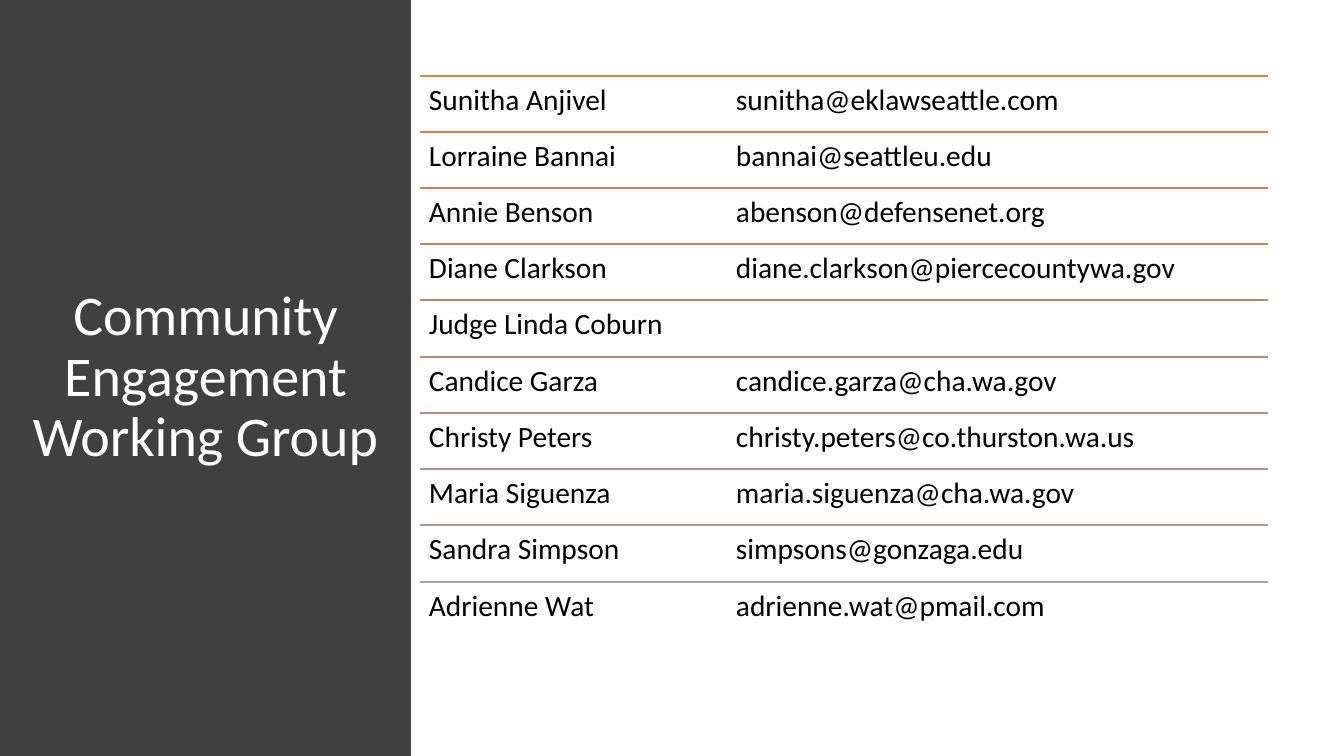
import pptx
import pptx.util
import pptx.dml.color
import pptx.enum.shapes
import pptx.enum.text
import lxml.etree

PX = 12192000 / 1344
FONT = "Calibri"
COLORS = {"panel": "404040", "title": "FFFFFF", "text": "000000"}
LEFT, TOP, WIDTH, SPAN, ROW, INSET, TAB = 420, 76, 848, 506, 56, 9, 307

# name, address, colour of the rule above
MEMBERS = [
    ("Sunitha Anjivel", "sunitha@eklawseattle.com", "ED7D31"),
    ("Lorraine Bannai", "bannai@seattleu.edu", "E37A40"),
    ("Annie Benson", "abenson@defensenet.org", "DA7A4E"),
    ("Diane Clarkson", "diane.clarkson@piercecountywa.gov", "D17B5C"),
    ("Judge Linda Coburn", "", "C87F69"),
    ("Candice Garza", "candice.garza@cha.wa.gov", "C08376"),
    ("Christy Peters", "christy.peters@co.thurston.wa.us", "B98A82"),
    ("Maria Siguenza", "maria.siguenza@cha.wa.gov", "B2928E"),
    ("Sandra Simpson", "simpsons@gonzaga.edu", "AB9B9A"),
    ("Adrienne Wat", "adrienne.wat@pmail.com", "A5A5A5"),
]


def emu(*px):
    """Turn px lengths into EMU."""
    return [pptx.util.Emu(round(n * PX)) for n in px]


def write(frame, text, size, color):
    """Put one styled run into the first paragraph and return the paragraph."""
    frame.word_wrap = True
    para = frame.paragraphs[0]
    para.line_spacing = 0.9
    run = para.add_run()
    run.text = text
    run.font.name = FONT
    run.font.size = pptx.util.Pt(size)
    run.font.color.rgb = pptx.dml.color.RGBColor.from_string(color)
    return para


deck = pptx.Presentation()
deck.slide_width, deck.slide_height = emu(1344, 756)
slide = deck.slides.add_slide(deck.slide_layouts[6])
shapes = slide.shapes

# Title panel
panel = shapes.add_shape(
    pptx.enum.shapes.MSO_SHAPE.RECTANGLE, *emu(0, 0, 411, 756))
panel.shadow.inherit = False
panel.fill.solid()
panel.fill.fore_color.rgb = pptx.dml.color.RGBColor.from_string(COLORS["panel"])
panel.line.fill.background()
panel.text_frame.vertical_anchor = pptx.enum.text.MSO_ANCHOR.MIDDLE
title = write(panel.text_frame, "Community Engagement Working Group", 40,
              COLORS["title"])
title.alignment = pptx.enum.text.PP_ALIGN.CENTER

# Member rows, each under a rule
for i, (name, mail, color) in enumerate(MEMBERS):
    top = TOP + i * SPAN // (len(MEMBERS) - 1)
    rule = shapes.add_connector(
        pptx.enum.shapes.MSO_CONNECTOR.STRAIGHT,
        *emu(LEFT, top, LEFT + WIDTH, top))
    rule.line.color.rgb = pptx.dml.color.RGBColor.from_string(color)
    rule.line.width = pptx.util.Pt(1)
    lxml.etree.SubElement(rule._element.spPr, pptx.oxml.ns.qn("a:effectLst"))

    box = shapes.add_textbox(*emu(LEFT, top, WIDTH, ROW))
    frame = box.text_frame
    (frame.margin_left, frame.margin_top,
     frame.margin_right, frame.margin_bottom) = emu(*[INSET] * 4)
    text = f"{name}\t{mail}" if mail else name
    para = write(frame, text, 21, COLORS["text"])
    props = para._p.get_or_add_pPr()
    tabs = lxml.etree.SubElement(props, pptx.oxml.ns.qn("a:tabLst"))
    lxml.etree.SubElement(tabs, pptx.oxml.ns.qn("a:tab"),
                          pos=str(int(emu(TAB)[0])), algn="l")

deck.save("out.pptx")
